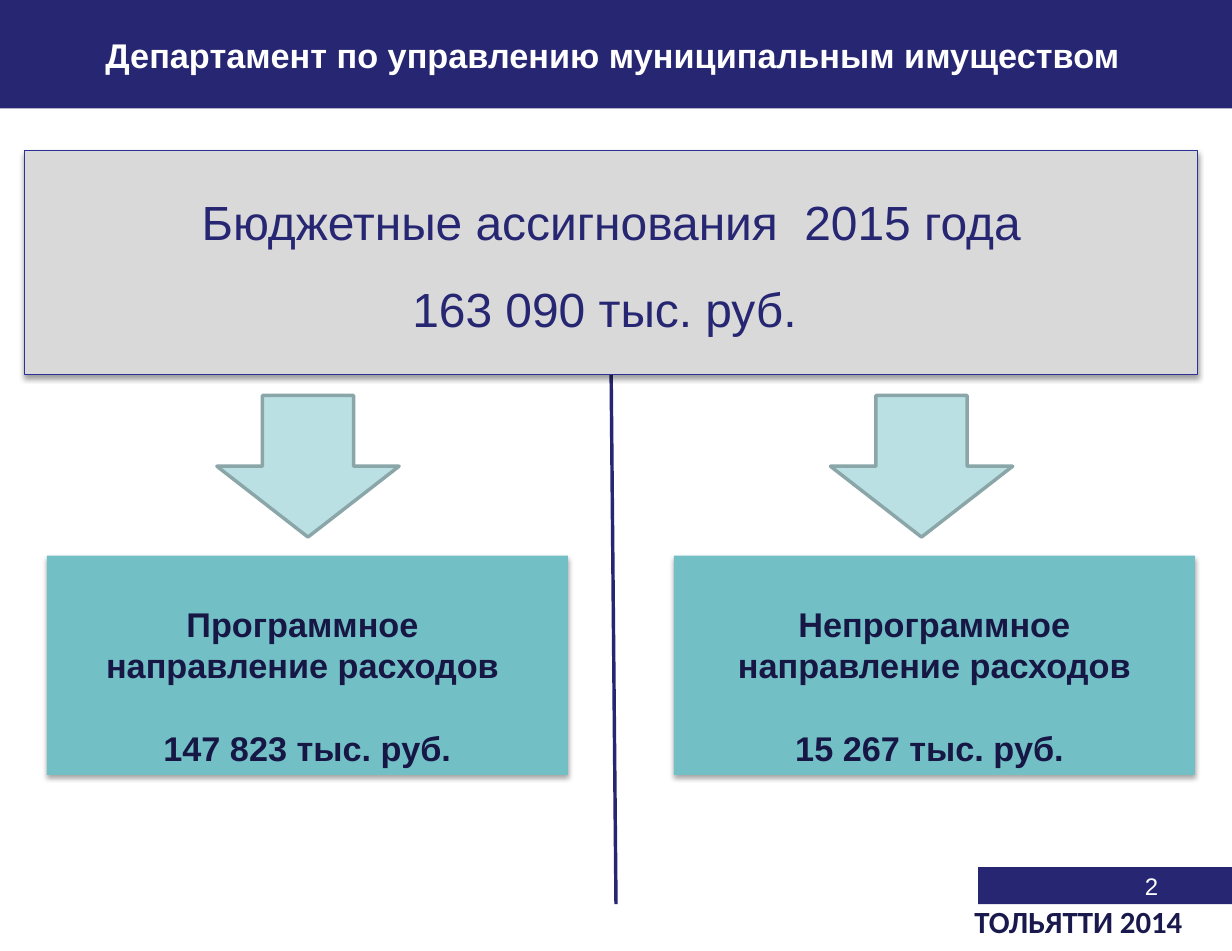
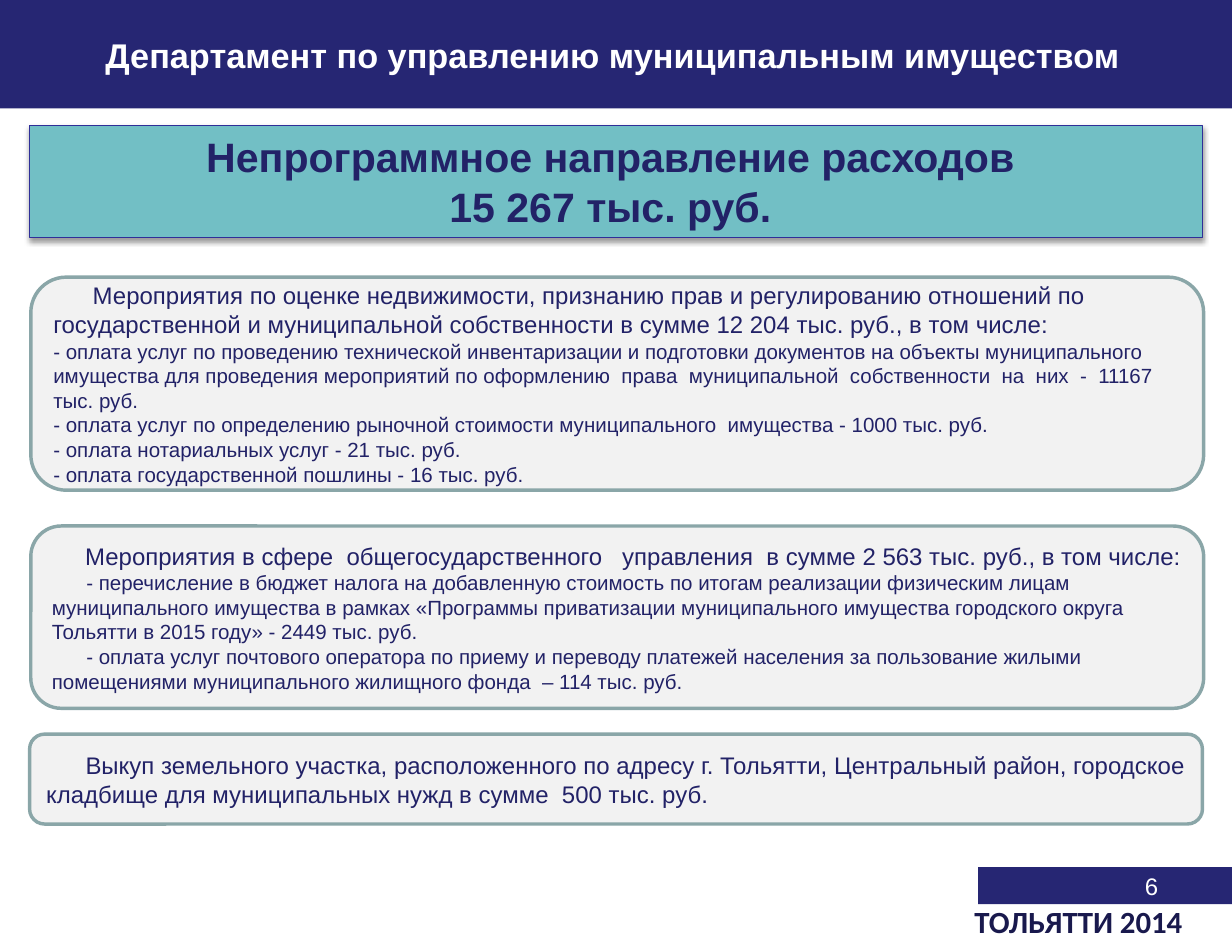
"""Build two slides on the 2015 budget of the municipal property department."""
import pptx
import pptx.dml.color
import pptx.enum.shapes
import pptx.enum.text
import pptx.oxml
import pptx.oxml.ns
import pptx.util

Inches = pptx.util.Inches
Pt = pptx.util.Pt
RGB = pptx.dml.color.RGBColor
SHAPE = pptx.enum.shapes.MSO_SHAPE
ALIGN = pptx.enum.text.PP_ALIGN
ANCHOR = pptx.enum.text.MSO_ANCHOR

NAVY = RGB(0x26, 0x26, 0x73)
TEXT_NAVY = RGB(0x22, 0x22, 0x67)
DARK_NAVY = RGB(0x17, 0x17, 0x45)
FOOTER_NAVY = RGB(0x19, 0x19, 0x4D)
BORDER_BLUE = RGB(0x2F, 0x2F, 0x98)
TEAL = RGB(0x72, 0xBF, 0xC5)
PALE_TEAL = RGB(0xBB, 0xE0, 0xE3)
GREY_TEAL = RGB(0x8A, 0xA6, 0xA8)
GREY = RGB(0xD9, 0xD9, 0xD9)
PALE_GREY = RGB(0xF2, 0xF2, 0xF2)
WHITE = RGB(0xFF, 0xFF, 0xFF)


def add_block(slide, kind, at, fill, line=None, width=0.75, shadow=None):
    block = slide.shapes.add_shape(kind, *map(Inches, at))
    block.shadow.inherit = False
    block.fill.solid()
    block.fill.fore_color.rgb = fill
    if line is None:
        block.line.fill.background()
    else:
        block.line.color.rgb = line
        block.line.width = Pt(width)
    if shadow:
        opacity, distance = shadow
        effects = block.element.spPr.find(pptx.oxml.ns.qn("a:effectLst"))
        effects.append(pptx.oxml.parse_xml(
            f'<a:outerShdw {pptx.oxml.ns.nsdecls("a")} blurRad="{Pt(3.1)}" '
            f'dist="{Pt(distance)}" dir="5400000" rotWithShape="0">'
            f'<a:srgbClr val="000000"><a:alpha val="{opacity * 1000}"/>'
            '</a:srgbClr></a:outerShdw>'))
    return block


def write(shape, lines, size, color, bold=False, align=ALIGN.CENTER,
          anchor=ANCHOR.TOP, spacing=None, font="Arial"):
    frame = shape.text_frame
    frame.word_wrap = True
    frame.vertical_anchor = anchor
    for number, line in enumerate(lines):
        paragraph = frame.paragraphs[0] if number == 0 else frame.add_paragraph()
        paragraph.text = line
        paragraph.alignment = align
        paragraph.line_spacing = spacing
        paragraph.font.name = font
        paragraph.font.size = Pt(size)
        paragraph.font.bold = bold
        paragraph.font.color.rgb = color
    return frame


deck = pptx.Presentation()
deck.slide_width = Inches(10)
deck.slide_height = Inches(7.72)

for page in ("2", "6"):
    slide = deck.slides.add_slide(deck.slide_layouts[6])
    add_block(slide, SHAPE.RECTANGLE, (7.94, 7.04, 2.06, 0.3), NAVY)
    page_number = slide.shapes.add_textbox(*map(Inches, (7.17, 7.03, 2.33, 0.54)))
    write(page_number, [page], 14, WHITE, align=ALIGN.RIGHT)
    header = add_block(slide, SHAPE.RECTANGLE, (0, 0, 10, 0.88), NAVY)
    title = write(header, ["Департамент по управлению муниципальным имуществом  "],
                  20, WHITE, bold=True, anchor=ANCHOR.MIDDLE, spacing=0.8)
    title.margin_left = Inches(0.2)
    title.margin_top = Inches(0.12)
    footer = slide.shapes.add_textbox(*map(Inches, (7.81, 7.34, 2.21, 0.35)))
    write(footer, ["ТОЛЬЯТТИ 2014"], 18, FOOTER_NAVY, bold=True, align=ALIGN.LEFT,
          spacing=0.8, font="Calibri")

overview, details = deck.slides

divider = overview.shapes.add_connector(
    pptx.enum.shapes.MSO_CONNECTOR.STRAIGHT, *map(Inches, (4.96, 2.96, 5, 7.34)))
divider.line.color.rgb = NAVY
divider.line.width = Pt(2)
divider.element.spPr.append(pptx.oxml.parse_xml(
    f'<a:effectLst {pptx.oxml.ns.nsdecls("a")}/>'))

budget = add_block(overview, SHAPE.RECTANGLE, (0.2, 1.22, 9.52, 1.82), GREY,
                   BORDER_BLUE, shadow=(38, 1.6))
budget_text = write(budget, ["Бюджетные ассигнования  2015 года", "163 090 тыс. руб. "],
                    28, NAVY, spacing=0.8)
budget_text.margin_top = Inches(0.43)
budget_text.paragraphs[1].space_before = Pt(24)

directions = [
    (0.38, 1.76, ["Программное ", "направление расходов ", "147 823 тыс. руб."]),
    (5.47, 6.74, ["Непрограммное направление расходов", "15 267 тыс. руб. "]),
]
for left, arrow_left, lines in directions:
    direction = add_block(overview, SHAPE.RECTANGLE, (left, 4.51, 4.23, 1.78), TEAL,
                          shadow=(35, 1.8))
    direction_text = write(direction, lines, 20, DARK_NAVY, bold=True)
    direction_text.margin_top = Inches(0.39)
    direction_text.paragraphs[-1].space_before = Pt(24)
    add_block(overview, SHAPE.DOWN_ARROW, (arrow_left, 3.21, 1.48, 1.15), PALE_TEAL,
              GREY_TEAL, 2)

heading = add_block(details, SHAPE.RECTANGLE, (0.24, 1.02, 9.52, 0.91), TEAL,
                    BORDER_BLUE, shadow=(38, 1.6))
write(heading, ["Непрограммное направление расходов ", "15 267 тыс. руб. "], 24,
      TEXT_NAVY, bold=True)

measures = [
    (0.25, 2.25, 1.73, 0.32, 0, [
        "Мероприятия по оценке недвижимости, признанию прав и регулированию отношений по "
        "государственной и муниципальной собственности в сумме 12 204 тыс. руб., в том числе:",
        "- оплата услуг по проведению технической инвентаризации и подготовки документов на "
        "объекты муниципального имущества для проведения мероприятий по оформлению  права  "
        "муниципальной  собственности  на  них  -  11167 тыс. руб.",
        "- оплата услуг по определению рыночной стоимости муниципального  имущества - "
        "1000 тыс. руб.",
        "- оплата нотариальных услуг - 21 тыс. руб.",
        "- оплата государственной пошлины - 16 тыс. руб.",
    ]),
    (0.25, 4.27, 1.48, 0.27, 0.28, [
        "Мероприятия в сфере  общегосударственного   управления  в сумме 2 563 тыс. руб., "
        "в том числе:",
        "- перечисление в бюджет налога на добавленную стоимость по итогам реализации "
        "физическим лицам муниципального имущества в рамках «Программы приватизации "
        "муниципального имущества городского округа Тольятти в 2015 году» - 2449 тыс. руб.",
        "- оплата услуг почтового оператора по приему и переводу платежей населения за "
        "пользование жилыми помещениями муниципального жилищного фонда  – 114 тыс. руб.",
    ]),
    (0.24, 5.96, 0.73, 0.32, 0, [
        "Выкуп земельного участка, расположенного по адресу г. Тольятти, Центральный район, "
        "городское кладбище для муниципальных нужд в сумме  500 тыс. руб.",
    ]),
]
for left, top, height, lead_indent, item_indent, lines in measures:
    measure = add_block(details, SHAPE.ROUNDED_RECTANGLE, (left, top, 9.52, height),
                        PALE_GREY, GREY_TEAL, 2)
    measure_text = write(measure, lines, 12, TEXT_NAVY, align=ALIGN.LEFT,
                         anchor=ANCHOR.MIDDLE)
    measure_text.paragraphs[0].font.size = Pt(14)
    for number, paragraph in enumerate(measure_text.paragraphs):
        indent = item_indent if number else lead_indent
        paragraph._p.get_or_add_pPr().set("indent", str(Inches(indent)))

deck.save("out.pptx")
